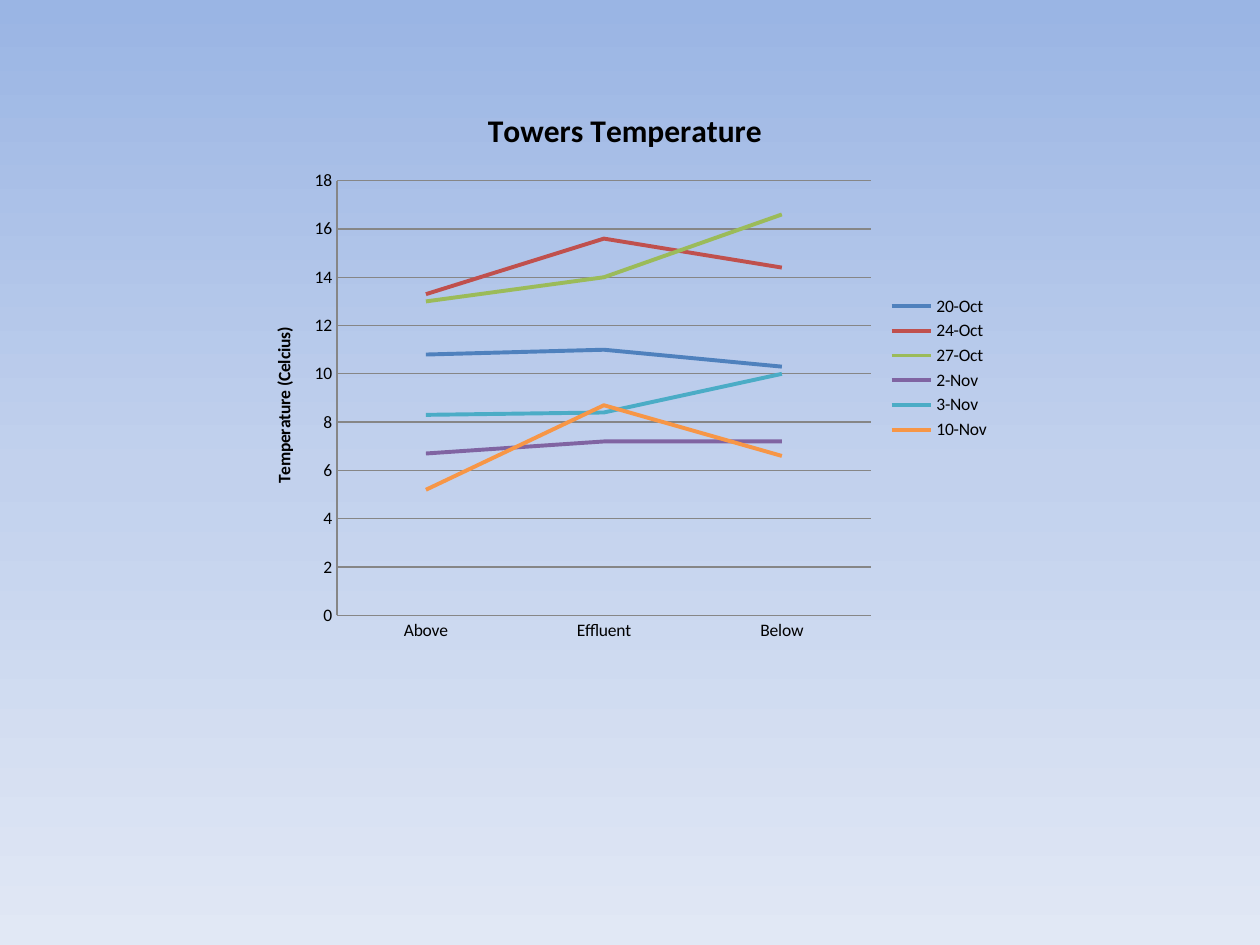
from copy import deepcopy

from pptx import Presentation
from pptx.chart import data as chart_data
from pptx.dml.color import RGBColor
from pptx.enum import chart as ch
from pptx.oxml.ns import qn
from pptx.util import Inches, Pt

# Content
TITLE = "Towers Temperature"
AXIS_TITLE = "Temperature (Celcius)"
SITES = ["Above", "Effluent", "Below"]
READINGS = [
    ("20-Oct", (10.8, 11, 10.3), "blue"),
    ("24-Oct", (13.3, 15.6, 14.4), "red"),
    ("27-Oct", (13, 14, 16.6), "green"),
    ("2-Nov", (6.7, 7.2, 7.2), "purple"),
    ("3-Nov", (8.3, 8.4, 10), "aqua"),
    ("10-Nov", (5.2, 8.7, 6.6), "orange"),
]
COLORS = {
    "blue": "4F81BD", "red": "C0504D", "green": "9BBB59",
    "purple": "8064A2", "aqua": "4BACC6", "orange": "F79646",
    "text": "000000", "axis": "868686",
    "sky top": "9AB5E4", "sky middle": "C2D1ED", "sky bottom": "E1E8F5",
}
BACKGROUND = [(0, "sky top"), (0.5, "sky middle"), (1, "sky bottom")]


def color(name):
    return RGBColor.from_string(COLORS[name])


def style_font(font, size, bold=False):
    font.name = "Calibri"
    font.size = Pt(size)
    font.bold = bold
    font.color.rgb = color("text")


def style_line(line, name, width):
    line.color.rgb = color(name)
    line.width = Pt(width)


def add_title(owner, words, size):
    frame = owner.text_frame
    frame.text = words
    style_font(frame.paragraphs[0].runs[0].font, size, bold=True)


presentation = Presentation()
presentation.slide_width, presentation.slide_height = Inches(10), Inches(7.5)
slide = presentation.slides.add_slide(presentation.slide_layouts[6])

# Background: three-stop gradient, running downwards
fill = slide.background.fill
fill.gradient()
fill.gradient_angle = 270
stop_list = slide.element.find(".//" + qn("a:gsLst"))
stop_list.insert(1, deepcopy(stop_list[0]))
for stop, (position, name) in zip(fill.gradient_stops, BACKGROUND):
    stop.position = position
    stop.color.rgb = color(name)

# Line chart
data = chart_data.CategoryChartData()
data.categories = SITES
for date, values, _ in READINGS:
    data.add_series(date, values)
chart = slide.shapes.add_chart(
    ch.XL_CHART_TYPE.LINE, Inches(1.96), Inches(0.67), Inches(6), Inches(4.5), data
).chart
style_font(chart.font, 10)
add_title(chart.chart_title, TITLE, 18)
chart.chart_title.include_in_layout = False

chart.plots[0].vary_by_categories = False
for series, (_, _, name) in zip(chart.plots[0].series, READINGS):
    series.smooth = False
    series.marker.style = ch.XL_MARKER_STYLE.NONE
    style_line(series.format.line, name, 2.25)

# Axes and legend
for axis in (chart.category_axis, chart.value_axis):
    axis.major_tick_mark = axis.minor_tick_mark = ch.XL_TICK_MARK.NONE
    style_line(axis.format.line, "axis", 0.75)
value_axis = chart.value_axis
value_axis.minimum_scale, value_axis.maximum_scale, value_axis.major_unit = 0, 18, 2
value_axis.has_major_gridlines = True
style_line(value_axis.major_gridlines.format.line, "axis", 0.75)
add_title(value_axis.axis_title, AXIS_TITLE, 10)

chart.has_legend = True
chart.legend.position = ch.XL_LEGEND_POSITION.RIGHT
chart.legend.include_in_layout = False

presentation.save("out.pptx")
